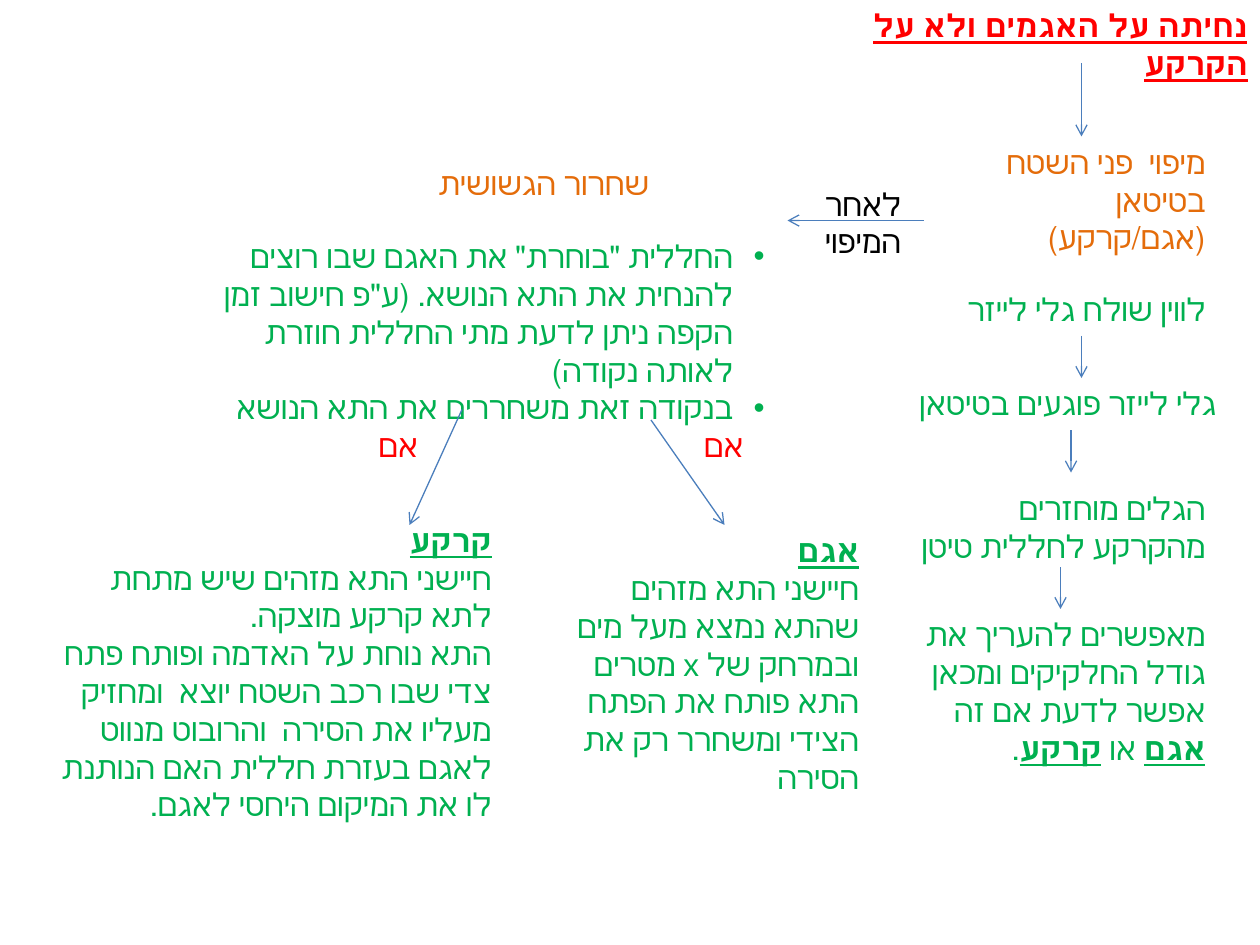
import pptx
import pptx.util
import pptx.dml.color
import pptx.enum.shapes
import pptx.enum.text
import pptx.oxml
from pptx.oxml.ns import qn
import lxml.etree

COLORS = {"red": "FF0000", "orange": "E46C0A", "green": "00B050",
          "black": "000000", "arrow": "4B7EBC"}
FONT = "Arial"
UNITS_PER_INCH = 12  # the grid: 120 columns by 90 rows
LINE_HEIGHT, PADDING = 0.303, 0.1  # inches
BULLET_INDENT = 0.25

# Text: (column, row, columns wide, lines tall, colour, bulleted, paragraphs)
# Words between asterisks are bold and underlined
TEXTS = [
    # Heading and mapping stage
    (77.5, 0, 42.5, 1, "red", False, ["*נחיתה על האגמים ולא על הקרקע*"]),
    (90, 13, 26, 2, "orange", False, ["מיפוי  פני השטח בטיטאן (אגם/קרקע)"]),
    # Laser steps
    (89, 27, 27, 1, "green", False, ["לווין שולח גלי לייזר"]),
    (84, 36, 33, 1, "green", False, ["גלי לייזר פוגעים בטיטאן"]),
    (85, 46, 31, 2, "green", False, ["הגלים מוחזרים מהקרקע לחללית טיטן"]),
    (85, 58, 31, 4, "green", False, [
        "מאפשרים להעריך את גודל החלקיקים ומכאן אפשר לדעת אם זה ",
        "*אגם* או *קרקע*."]),
    # Release stage
    (75.5, 17, 11.5, 2, "black", False, ["לאחר המיפוי"]),
    (29, 15, 34, 1, "orange", False, ["שחרור הגשושית"]),
    (16, 22, 58, 4, "green", True, [
        'החללית "בוחרת" את האגם שבו רוצים להנחית את התא הנושא. '
        '(ע"פ חישוב זמן הקפה ניתן לדעת מתי החללית חוזרת לאותה נקודה)',
        "בנקודה זאת משחררים את התא הנושא"]),
    # Two outcomes
    (65, 40, 7, 1, "red", False, ["אם"]),
    (34, 40, 7, 1, "red", False, ["אם"]),
    (50, 50, 33, 6, "green", False, [
        "*אגם*",
        "חיישני התא מזהים שהתא נמצא מעל מים ובמרחק של x מטרים "
        "התא פותח את הפתח הצידי ומשחרר רק את הסירה "]),
    (4, 49, 44, 8, "green", False, [
        "*קרקע*",
        "חיישני התא מזהים שיש מתחת לתא קרקע מוצקה.",
        "התא נוחת על האדמה ופותח פתח צדי שבו רכב השטח יוצא  ומחזיק מעליו "
        "את הסירה  והרובוט מנווט לאגם בעזרת חללית האם הנותנת לו את "
        "המיקום היחסי לאגם."]),
]

# Arrows: (from column, from row, to column, to row)
ARROWS = [
    (103, 6, 103, 13), (103, 32, 103, 36), (102, 41, 102, 45),
    (101, 54, 101, 58), (88, 21, 75, 21), (62, 40, 69, 50), (44, 39, 39, 50),
]


def grid(units):
    return pptx.util.Inches(units / UNITS_PER_INCH)


def color(name):
    return pptx.dml.color.RGBColor.from_string(COLORS[name])


def add_paragraph(paragraph, text, color_name, bulleted):
    paragraph.alignment = pptx.enum.text.PP_ALIGN.RIGHT
    properties = paragraph._p.get_or_add_pPr()
    properties.set("rtl", "1")
    if bulleted:
        indent = pptx.util.Inches(BULLET_INDENT)
        properties.set("marL", str(indent))
        properties.set("indent", str(-indent))
        lxml.etree.SubElement(properties, qn("a:buFont")).set("typeface", FONT)
        lxml.etree.SubElement(properties, qn("a:buChar")).set("char", "•")
    for index, part in enumerate(text.split("*")):
        if not part:
            continue
        run = paragraph.add_run()
        run.text = part
        run.font.size = pptx.util.Pt(18)
        run.font.name = FONT
        run.font.color.rgb = color(color_name)
        run.font.bold = run.font.underline = index % 2 == 1
        run.font.language_id = pptx.enum.lang.MSO_LANGUAGE_ID.HEBREW


def add_text(slide, column, row, width, lines, color_name, bulleted, texts):
    height = pptx.util.Inches(PADDING + LINE_HEIGHT * lines)
    shape = slide.shapes.add_textbox(grid(column), grid(row), grid(width), height)
    frame = shape.text_frame
    frame.word_wrap = True
    frame.auto_size = pptx.enum.text.MSO_AUTO_SIZE.SHAPE_TO_FIT_TEXT
    for index, text in enumerate(texts):
        paragraph = frame.add_paragraph() if index else frame.paragraphs[0]
        add_paragraph(paragraph, text, color_name, bulleted)


def add_arrow(slide, *ends):
    connector = slide.shapes.add_connector(
        pptx.enum.shapes.MSO_CONNECTOR.STRAIGHT, *map(grid, ends))
    connector.line.color.rgb = color("arrow")
    connector.line.width = pptx.util.Pt(0.75)
    line = connector.line._get_or_add_ln()
    lxml.etree.SubElement(line, qn("a:tailEnd")).set("type", "arrow")
    lxml.etree.SubElement(connector._element.spPr, qn("a:effectLst"))


def main():
    presentation = pptx.Presentation()
    presentation.slide_width = grid(120)
    presentation.slide_height = grid(90)
    slide = presentation.slides.add_slide(presentation.slide_layouts[6])
    for text in TEXTS:
        add_text(slide, *text)
    for arrow in ARROWS:
        add_arrow(slide, *arrow)
    presentation.save("out.pptx")


if __name__ == "__main__":
    main()
